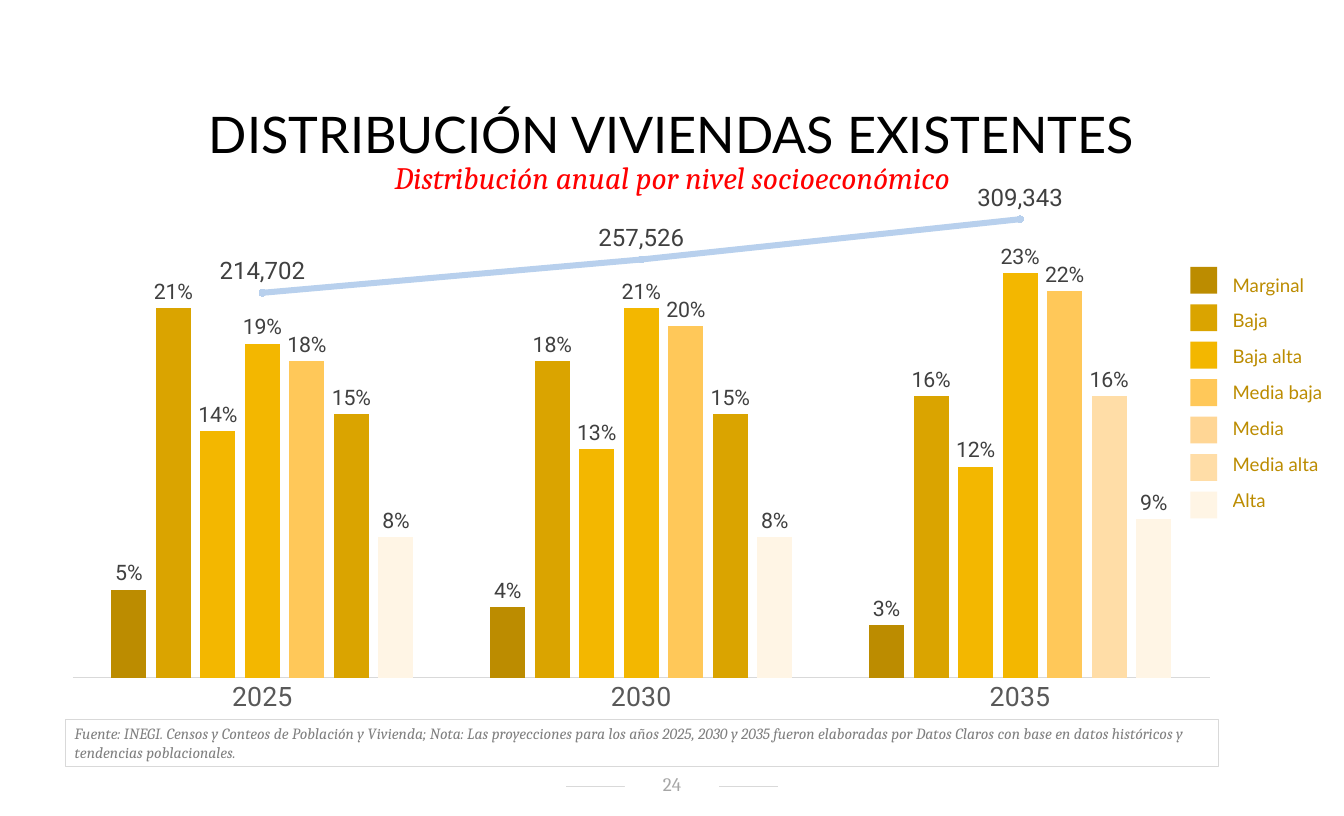
import pptx
import pptx.chart.data
import pptx.dml.color
import pptx.enum.chart
import pptx.enum.shapes
import pptx.enum.text
import pptx.oxml.ns
import pptx.oxml.xmlchemy
import pptx.util

RGB = pptx.dml.color.RGBColor
Pt = pptx.util.Pt
ALIGN = pptx.enum.text.PP_ALIGN
ANCHOR = pptx.enum.text.MSO_ANCHOR
CHART = pptx.enum.chart.XL_CHART_TYPE
LABEL = pptx.enum.chart.XL_LABEL_POSITION
element = pptx.oxml.xmlchemy.OxmlElement

BLACK, WHITE, RED = RGB(0, 0, 0), RGB(255, 255, 255), RGB(255, 0, 0)
DARK, AXIS_TEXT, GRAY = RGB(0x40, 0x40, 0x40), RGB(0x59, 0x59, 0x59), RGB(0x80, 0x80, 0x80)
PALE_GRAY, RULE, BLUE = RGB(0xA6, 0xA6, 0xA6), RGB(0xD9, 0xD9, 0xD9), RGB(0xB8, 0xD0, 0xED)
BROWN, GOLD, AMBER = RGB(0xBC, 0x8C, 0), RGB(0xDA, 0xA4, 0), RGB(0xF3, 0xB7, 0)
HONEY, PEACH = RGB(0xFF, 0xC8, 0x59), RGB(0xFF, 0xD6, 0x95)
SAND, CREAM = RGB(0xFF, 0xDD, 0xA7), RGB(0xFF, 0xF5, 0xE5)

TITLE = "DISTRIBUCIÓN VIVIENDAS EXISTENTES"
SUBTITLE = "Distribución anual por nivel socioeconómico"
SOURCE = (
    "Fuente: INEGI. Censos y Conteos de Población y Vivienda; Nota: Las proyecciones para los "
    "años 2025, 2030 y 2035 fueron elaboradas por Datos Claros con base en datos históricos y "
    "tendencias poblacionales."
)
PAGE = "24"
YEARS = ["2025", "2030", "2035"]
TOTALS = [214702, 257526, 309343]
LEVELS = [
    ("Marginal", BROWN, BROWN, (0.05, 0.04, 0.03)),
    ("Baja", GOLD, GOLD, (0.21, 0.18, 0.16)),
    ("Baja alta", AMBER, AMBER, (0.14, 0.13, 0.12)),
    ("Media baja", HONEY, AMBER, (0.19, 0.21, 0.23)),
    ("Media", PEACH, HONEY, (0.18, 0.20, 0.22)),
    ("Media alta", SAND, GOLD, (0.15, 0.15, 0.16)),
    ("Alta", CREAM, CREAM, (0.08, 0.08, 0.09)),
]
POINT_COLORS = {(5, 2): SAND}

prs = pptx.Presentation()
prs.slide_width, prs.slide_height = pptx.util.Inches(14), pptx.util.Inches(8.5)
COL, ROW = prs.slide_width / 140, prs.slide_height / 85
s = prs.slides.add_slide(prs.slide_layouts[6])

BAR_FRAME, BAR_PLOT = (5.1, 23.5, 123.2, 51.9), (7.6, 24.8, 118.4, 45.8)
LINE_FRAME, LINE_PLOT = (5.1, 14.9, 123.2, 33.6), (7.6, 15.5, 118.4, 32.4)


def grid(x, y, w, h):
    return int(x * COL), int(y * ROW), int(w * COL), int(h * ROW)


def style(font, size, color, name, italic=False):
    font.size, font.name, font.italic = Pt(size), name, italic
    font.color.rgb = color


def paint(fill, color):
    fill.solid()
    fill.fore_color.rgb = color


def add_rect(box, fill, line=None):
    sp = s.shapes.add_shape(pptx.enum.shapes.MSO_SHAPE.RECTANGLE, *grid(*box))
    sp.shadow.inherit = False
    paint(sp.fill, fill)
    if line is None:
        sp.line.fill.background()
    else:
        sp.line.color.rgb, sp.line.width = line, Pt(0.75)
    return sp


def write(sp, text, size, color, name, align=ALIGN.CENTER, anchor=ANCHOR.TOP, italic=False):
    tf = sp.text_frame
    tf.word_wrap, tf.vertical_anchor = True, anchor
    p = tf.paragraphs[0]
    p.text, p.alignment = text, align
    style(p.font, size, color, name, italic)


def add_text(box, *args, **kwargs):
    write(s.shapes.add_textbox(*grid(*box)), *args, **kwargs)


def add_rule(x, y, w):
    x, y, w, _ = grid(x, y, w, 0)
    c = s.shapes.add_connector(pptx.enum.shapes.MSO_CONNECTOR.STRAIGHT, x, y, x + w, y)
    c.line.color.rgb, c.line.width = RULE, Pt(0.75)
    c._element.spPr.append(element("a:effectLst"))


def add_chart(kind, frame, plot, cats, series, fmt, font, top):
    data = pptx.chart.data.CategoryChartData(number_format=fmt)
    data.categories = cats
    for i, values in enumerate(series, 1):
        data.add_series(f"Series {i}", values)
    chart = s.shapes.add_chart(kind, *grid(*frame), data).chart
    chart.has_legend = chart.has_title = False
    style(chart.font, *font)
    axis = chart.value_axis
    axis.minimum_scale, axis.maximum_scale = 0, top
    axis.has_major_gridlines = axis.visible = False

    area = chart._chartSpace.chart.plotArea
    for old in area.findall(pptx.oxml.ns.qn("c:layout")):
        area.remove(old)
    layout, manual = element("c:layout"), element("c:manualLayout")
    x, y, w, h = frame
    px, py, pw, ph = plot
    settings = [
        ("layoutTarget", "inner"), ("xMode", "edge"), ("yMode", "edge"),
        ("x", (px - x) / w), ("y", (py - y) / h), ("w", pw / w), ("h", ph / h),
    ]
    for tag, value in settings:
        node = element(f"c:{tag}")
        node.set("val", str(value))
        manual.append(node)
    layout.append(manual)
    area.insert(0, layout)
    return chart


def label(series, fmt, size, position):
    d = series.data_labels
    d.show_value, d.position = True, position
    d.number_format, d.number_format_is_linked = fmt, False
    style(d.font, size, DARK, "Roboto")


for x in (59, 74.9):
    add_rule(x, 81.9, 6.15)
write(add_rect((65.1, 80.4, 9.8, 2.6), WHITE), PAGE, 14.3, PALE_GRAY, "Cambria", anchor=ANCHOR.MIDDLE)
write(add_rect((6.8, 74.9, 120.1, 4.9), WHITE, RULE), SOURCE, 11.7, GRAY, "Cambria",
      align=ALIGN.LEFT, italic=True)
add_text((1.9, 16, 136.2, 4.9), SUBTITLE, 23.4, RED, "Cambria", italic=True)

frame = s.shapes.add_table(len(LEVELS), 1, *grid(128.4, 27.8, 13, 3.74 * len(LEVELS)))
table = frame.table
table.first_row = table.horz_banding = False
for i, (name, key_color, _, _) in enumerate(LEVELS):
    cell = table.cell(i, 0)
    cell.fill.background()
    cell.margin_left = cell.margin_right = cell.margin_top = cell.margin_bottom = 0
    cell.vertical_anchor = ANCHOR.MIDDLE
    p = cell.text_frame.paragraphs[0]
    p.text = name
    style(p.font, 14, BROWN, "Lato")
    add_rect((124, 27.8 + 3.9 * i, 2.8, 2.8), key_color)

bars = add_chart(CHART.COLUMN_CLUSTERED, BAR_FRAME, BAR_PLOT, YEARS,
                 [values for *_, values in LEVELS], "0%", (9, BLACK, "Roboto"), 0.25)
plot = bars.plots[0]
plot.gap_width, plot.overlap, plot.vary_by_categories = 219, -27, False
for series, (_, _, color, _) in zip(plot.series, LEVELS):
    paint(series.format.fill, color)
    label(series, "0%", 16, LABEL.OUTSIDE_END)
for (i, j), color in POINT_COLORS.items():
    paint(plot.series[i].points[j].format.fill, color)
axis = bars.category_axis
axis.major_tick_mark = pptx.enum.chart.XL_TICK_MARK.NONE
axis.format.line.color.rgb, axis.format.line.width = RULE, Pt(0.75)
style(axis.tick_labels.font, 20, AXIS_TEXT, "Roboto")

add_text((9.7, 10.2, 120.5, 7.5), TITLE, 37.8, BLACK, "Lato")

trend = add_chart(CHART.LINE_MARKERS, LINE_FRAME, LINE_PLOT, ["1", "2", "3"],
                  [TOTALS], "#,##0", (10, BLACK, "Calibri"), 400000)
trend.category_axis.visible = False
trend.plots[0].vary_by_categories = False
total = trend.plots[0].series[0]
total.smooth = False
total.format.line.color.rgb, total.format.line.width = BLUE, Pt(4.5)
total.marker.style, total.marker.size = pptx.enum.chart.XL_MARKER_STYLE.CIRCLE, 5
paint(total.marker.format.fill, BLUE)
total.marker.format.line.color.rgb = BLUE
label(total, "#,##0", 18, LABEL.ABOVE)

prs.save("out.pptx")
